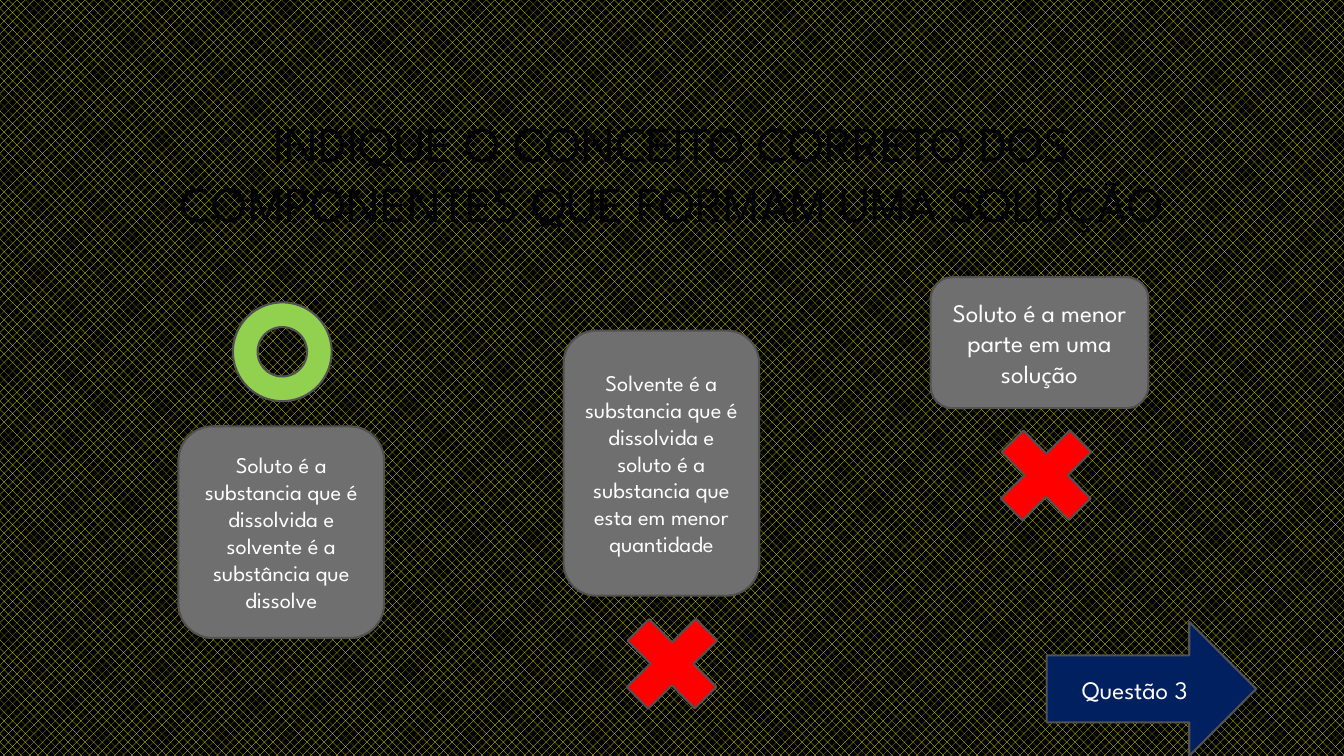
import pptx
import pptx.dml.color
import pptx.enum.dml
import pptx.enum.shapes
import pptx.enum.text
import pptx.util

Inches = pptx.util.Inches
KIND = pptx.enum.shapes.MSO_SHAPE
FONT = "League Spartan"
GREY, EDGE, WHITE, BLACK = "6F6F6F", "525252", "FFFFFF", "000000"
GREEN, RED, NAVY, YELLOW = "92D050", "FF0000", "002060", "FFFF00"

TITLE = "INDIQUE O CONCEITO CORRETO DOS COMPONENTES QUE FORMAM UMA SOLUÇÃO"
CARDS = [
    ((1.77, 4.23, 2.04, 2.1), 16,
     "Soluto é a substancia que é dissolvida e solvente é a substância que dissolve"),
    ((5.59, 3.28, 1.94, 2.63), 16,
     "Solvente é a substancia que é dissolvida e soluto é a substancia que esta em menor quantidade"),
    ((9.23, 2.75, 2.16, 1.3), 18, "Soluto é a menor parte em uma solução"),
]
RIGHT = (2.31, 3, 0.98, 0.98)
WRONG = [(9.73, 4.06, 1.29, 1.31), (6.02, 5.93, 1.29, 1.31)]
NEXT = (10.38, 6.17, 2.08, 1.33)


def color(code):
    return pptx.dml.color.RGBColor.from_string(code)


def style(item, **values):
    for name, value in values.items():
        setattr(item, name, value)


def write(shape, text, size, ink):
    """Put one centred paragraph in the middle of a shape."""
    frame = shape.text_frame
    style(frame, word_wrap=True,
          vertical_anchor=pptx.enum.text.MSO_ANCHOR.MIDDLE)
    para = frame.paragraphs[0]
    para.alignment = pptx.enum.text.PP_ALIGN.CENTER
    run = para.add_run()
    run.text = text
    style(run.font, name=FONT, size=pptx.util.Pt(size))
    run.font.color.rgb = color(ink)


def draw(slide, kind, box, fill, turn=0):
    """Add a filled, outlined shape without shadow."""
    shape = slide.shapes.add_shape(kind, *map(Inches, box))
    shape.rotation = turn
    shape.shadow.inherit = False
    shape.fill.solid()
    shape.fill.fore_color.rgb = color(fill)
    shape.line.color.rgb = color(EDGE)
    shape.line.width = pptx.util.Pt(1.5)
    return shape


def backdrop(slide):
    fill = slide.background.fill
    fill.patterned()
    fill.pattern = pptx.enum.dml.MSO_PATTERN.from_xml("pct40")
    fill.fore_color.rgb = color(YELLOW)
    fill.back_color.rgb = color(BLACK)


def title(slide, box):
    write(slide.shapes.add_textbox(*map(Inches, box)), TITLE, 36, BLACK)


def answers(slide):
    for box, size, text in CARDS:
        write(draw(slide, KIND.ROUNDED_RECTANGLE, box, GREY), text, size, WHITE)


def marks(slide):
    draw(slide, KIND.DONUT, RIGHT, GREEN)
    for box in WRONG:
        draw(slide, KIND.MATH_PLUS, box, RED, 45.3)


def onward(slide, box):
    write(draw(slide, KIND.RIGHT_ARROW, box, NAVY), "Questão 3", 18, WHITE)


def main():
    deck = pptx.Presentation()
    style(deck, slide_width=Inches(13.33), slide_height=Inches(7.5))
    slide = deck.slides.add_slide(deck.slide_layouts[6])
    backdrop(slide)
    title(slide, (1.25, 0.67, 10.83, 2.08))
    answers(slide)
    marks(slide)
    onward(slide, NEXT)
    deck.save("out.pptx")


if __name__ == "__main__":
    main()
